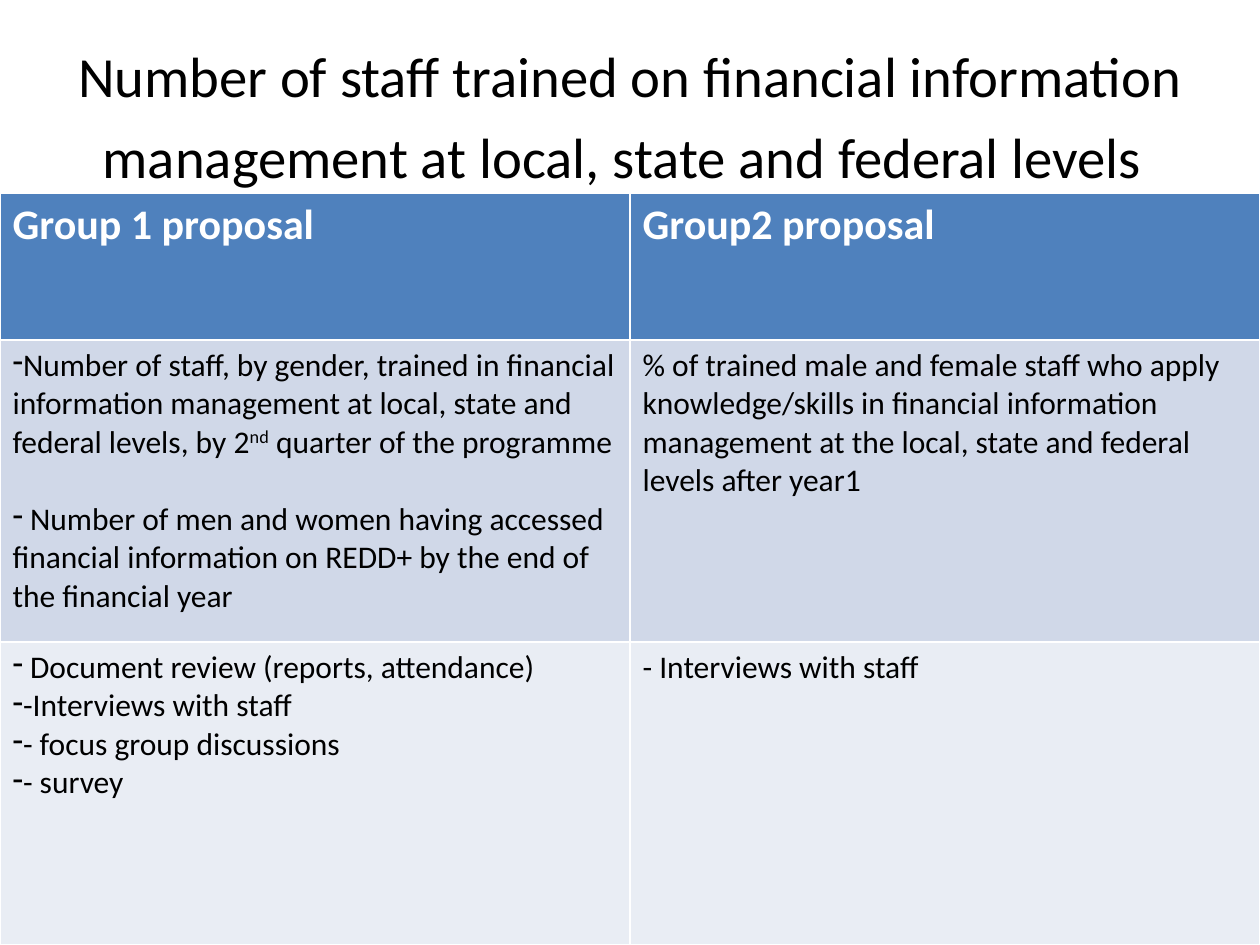
import pptx
import pptx.util
import pptx.dml.color
import pptx.enum.text
import lxml.etree

EMU_PER_PX = 914400 / 126
FONT = "Calibri"
COLORS = {"text": "000000", "header_text": "FFFFFF", "header": "4F81BD",
          "proposal": "D0D8E8", "method": "E9EDF4"}


def px(length):
    return pptx.util.Emu(round(length * EMU_PER_PX))


def style_font(font, size, color, bold=False):
    font.name = FONT
    font.size = pptx.util.Pt(size)
    font.bold = bold
    font.color.rgb = pptx.dml.color.RGBColor.from_string(COLORS[color])


presentation = pptx.Presentation()
presentation.slide_width, presentation.slide_height = px(1260), px(945)
slide = presentation.slides.add_slide(presentation.slide_layouts[5])

# Title; the larger closing space opens up the second line
title = slide.shapes.title
title.left, title.top, title.width, title.height = px(63), px(38), px(1134), px(157)
title.text_frame.auto_size = pptx.enum.text.MSO_AUTO_SIZE.NONE
title.text_frame.vertical_anchor = pptx.enum.text.MSO_ANCHOR.MIDDLE
paragraph = title.text_frame.paragraphs[0]
paragraph.alignment = pptx.enum.text.PP_ALIGN.CENTER
for text, size in [("Number of staff trained on financial information "
                    "management at local, state and federal levels", 32.4),
                   (" ", 39.6)]:
    run = paragraph.add_run()
    run.text = text
    style_font(run.font, size, "text")

# Rows: height, fill, text colour, size, gap between paragraphs, cells.
# A cell is a list of paragraphs, a paragraph is (bulleted, run texts).
rows = [
    (147, "header", "header_text", 24, 0, [
        [(False, ["Group 1 proposal"])],
        [(False, ["Group2 proposal"])]]),
    (302, "proposal", "text", 18, 22, [
        [(True, ["Number of staff, by gender, trained in financial information "
                 "management at local, state and federal levels, by 2",
                 "nd", " quarter of the programme"]),
         (True, [" Number of men and women having accessed financial "
                 "information on REDD+ by the end of the financial year"])],
        [(False, ["% of trained male and female staff who apply knowledge/skills "
                  "in financial information management at the local, state and "
                  "federal levels after year1"])]]),
    (303, "method", "text", 18, 0, [
        [(True, [" Document review (reports, attendance)"]),
         (True, ["-Interviews with staff"]),
         (True, ["- focus group discussions"]),
         (True, ["- survey"])],
        [(False, ["- Interviews with staff"])]]),
]

# Table; the default style draws the white cell borders
table = slide.shapes.add_table(len(rows), 2, 0, px(193), px(1260), px(752)).table
for row_index, (height, fill, color, size, gap, cells) in enumerate(rows):
    table.rows[row_index].height = px(height)
    for column_index, paragraphs in enumerate(cells):
        cell = table.cell(row_index, column_index)
        cell.fill.solid()
        cell.fill.fore_color.rgb = pptx.dml.color.RGBColor.from_string(COLORS[fill])
        for index, (bulleted, texts) in enumerate(paragraphs):
            frame = cell.text_frame
            paragraph = frame.add_paragraph() if index else frame.paragraphs[0]
            if index:
                paragraph.space_before = pptx.util.Pt(gap)
            if bulleted:
                properties = paragraph._p.get_or_add_pPr()
                properties.set("marL", "0")
                properties.set("indent", "0")
                bullet = lxml.etree.SubElement(properties, pptx.oxml.ns.qn("a:buChar"))
                bullet.set("char", "-")
            style_font(paragraph.font, size, color, bold=fill == "header")
            for text in texts:
                run = paragraph.add_run()
                run.text = text
                if text == "nd":
                    run._r.get_or_add_rPr().set("baseline", "30000")

presentation.save("out.pptx")
